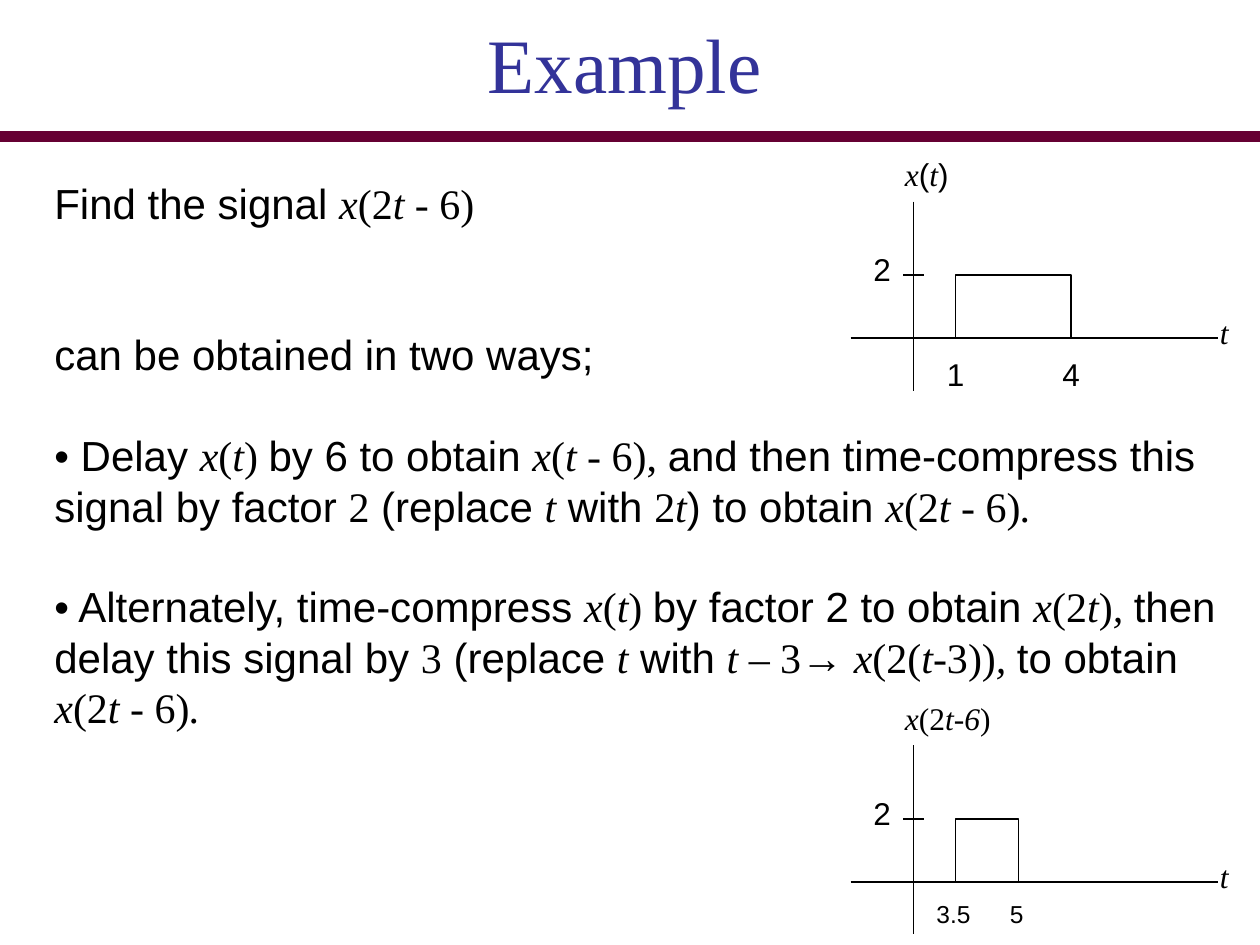
from itertools import groupby

from lxml.etree import SubElement
from pptx import Presentation
from pptx.dml.color import RGBColor
from pptx.enum.shapes import MSO_CONNECTOR, MSO_SHAPE
from pptx.enum.text import PP_ALIGN
from pptx.oxml.ns import qn
from pptx.util import Pt

COLORS = {"title": "333399", "rule": "660033", "ink": "000000"}
SANS, SERIF = "Arial", "Times New Roman"
LINE = 28.8

# Between dollar signs letters are italic; a leading underscore slants it all.
BODY = [
    (0, "Find the signal $x(2t - 6)$"),
    (2, "can be obtained in two ways;"),
    (1, "• Delay $x(t) $by 6 to obtain $x(t - 6), $and then time-compress this"),
    (0, "signal by factor $2$ (replace $t$ with $2t$) to obtain $x(2t - 6)$$_.$"),
    (1, "• Alternately, time-compress $x(t) $by factor 2 to obtain $x(2t)$$_, $"
        "then delay this signal by $3$ (replace $t$ with $t – 3→ x(2(t-3))$$_, $"
        "to obtain $x(2t - 6)$$_.$"),
]

GRAPHS = [
    {"top": 115.2, "name": "$x$($t$)", "name_width": 41, "pulse_width": 66,
     "tick_size": 18, "ticks": [("1", 534, 24.5), ("4", 600, 24.5)]},
    {"top": 426, "name": "$x(2$$_t-6$$)$", "name_width": 65, "pulse_width": 36,
     "tick_size": 14, "ticks": [("3.5", 528, 34), ("5", 570, 22)]},
]


def color(name):
    return RGBColor.from_string(COLORS[name])


def split_spans(text):
    for index, part in enumerate(text.split("$")):
        if not part:
            continue
        if index % 2 == 0:
            yield part, SANS, False
        elif part.startswith("_"):
            yield part[1:], SERIF, True
        else:
            for italic, letters in groupby(part, str.isalpha):
                yield "".join(letters), SERIF, italic


def write(paragraph, text, size, ink="ink"):
    for words, font, italic in split_spans(text):
        span = paragraph.add_run()
        span.text = words
        span.font.name = font
        span.font.size = Pt(size)
        span.font.italic = italic
        span.font.color.rgb = color(ink)


def add_box(page, left, top, width, height, wrap=True):
    box = page.shapes.add_textbox(Pt(left), Pt(top), Pt(width), Pt(height))
    box.text_frame.word_wrap = wrap
    return box.text_frame


def add_label(page, text, left, top, width, size=18):
    frame = add_box(page, left, top, width, size * 1.2 + 7.2, wrap=False)
    write(frame.paragraphs[0], text, size)


def add_line(page, x1, y1, x2, y2, weight=0.75, ink="ink"):
    line = page.shapes.add_connector(
        MSO_CONNECTOR.STRAIGHT, Pt(x1), Pt(y1), Pt(x2), Pt(y2))
    line.line.color.rgb = color(ink)
    line.line.width = Pt(weight)
    SubElement(line._element.spPr, qn("a:effectLst"))


def add_graph(page, graph):
    top = graph["top"]
    axis, level = top + 78, top + 42
    add_line(page, 522, top, 522, top + 108)
    add_line(page, 486, axis, 696, axis)
    pulse = page.shapes.add_shape(
        MSO_SHAPE.RECTANGLE, Pt(546), Pt(level), Pt(graph["pulse_width"]), Pt(axis - level))
    pulse.shadow.inherit = False
    pulse.fill.background()
    pulse.line.color.rgb = color("ink")
    pulse.line.width = Pt(1)
    add_line(page, 528, level, 516, level)
    for text, left, width in graph["ticks"]:
        add_label(page, text, left, axis + 6, width, graph["tick_size"])
    add_label(page, "2", 492, level - 18, 24.5)
    add_label(page, "$t$", 690, axis - 18, 19.5)
    add_label(page, graph["name"], 510, top - 30, graph["name_width"])


def main():
    deck = Presentation()
    deck.slide_width, deck.slide_height = Pt(720), Pt(540)
    page = deck.slides.add_slide(deck.slide_layouts[6])

    title = add_box(page, 0, 6, 714, 60.5).paragraphs[0]
    title.alignment = PP_ALIGN.CENTER
    write(title, "$_Example$", 44, "title")
    title.runs[0].font.italic = False

    body = add_box(page, 24, 98, 684, 327)
    for index, (gap, text) in enumerate(BODY):
        paragraph = body.add_paragraph() if index else body.paragraphs[0]
        paragraph.line_spacing = Pt(LINE)
        paragraph.space_before = Pt(gap * LINE)
        write(paragraph, text, 24)

    add_line(page, 0, 78, 720, 78, 6, "rule")
    for graph in GRAPHS:
        add_graph(page, graph)

    deck.save("out.pptx")


if __name__ == "__main__":
    main()
